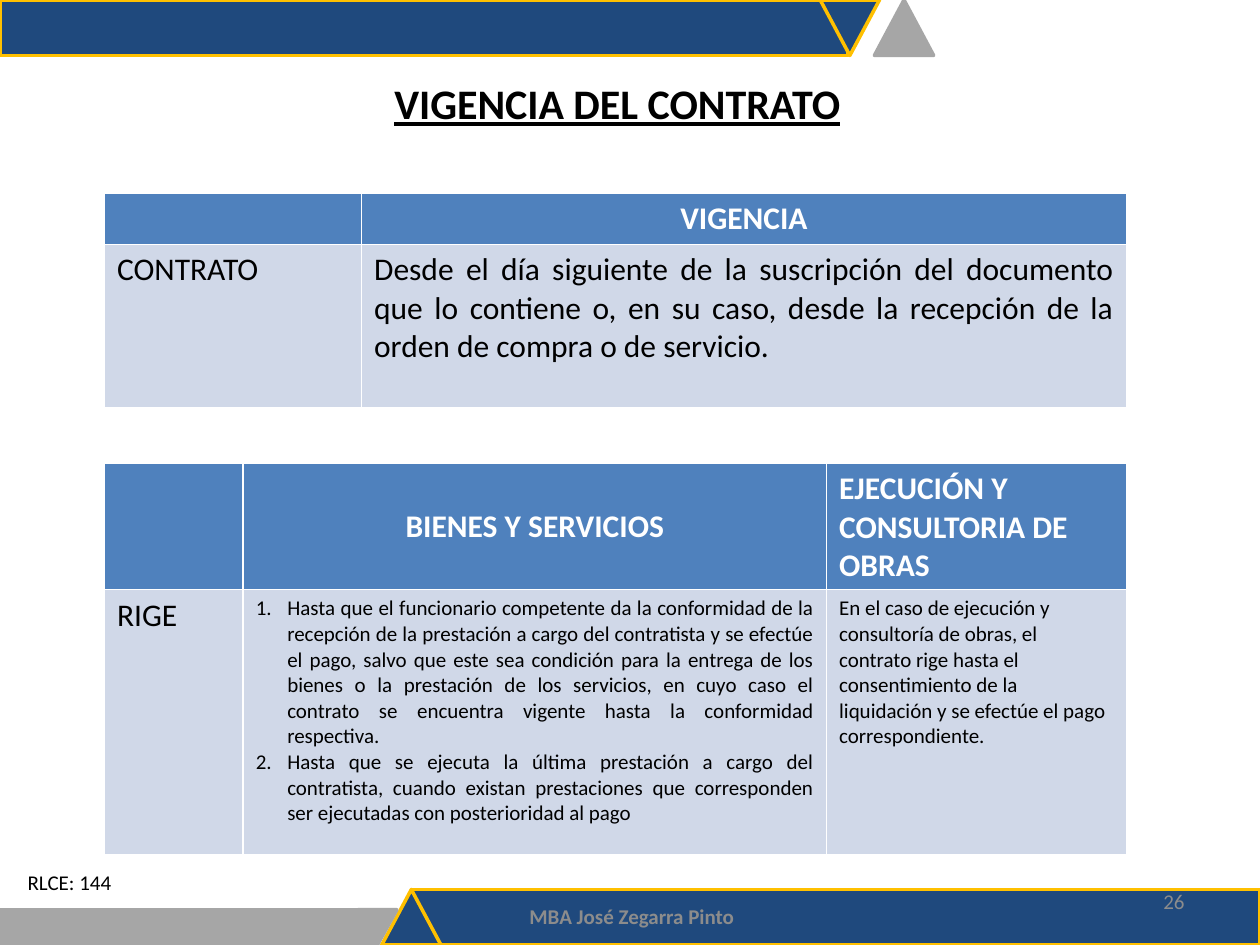
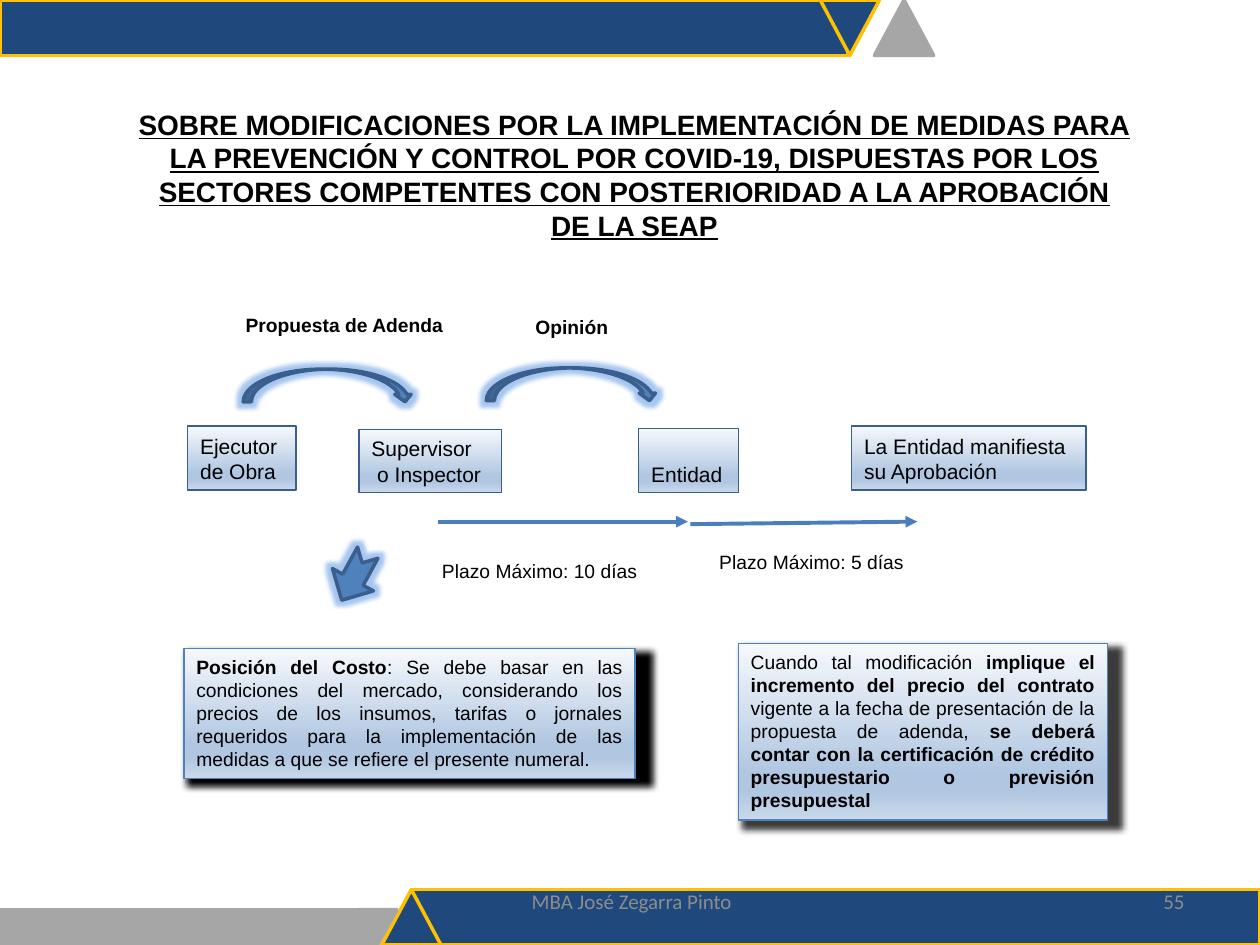
from dataclasses import dataclass, replace

from lxml.etree import SubElement
from pptx import Presentation
from pptx.dml.color import RGBColor
from pptx.enum.shapes import MSO_CONNECTOR, MSO_SHAPE
from pptx.enum.text import MSO_ANCHOR, PP_ALIGN
from pptx.oxml.ns import qn
from pptx.util import Inches, Pt

HEX = {
    "navy": "1F497D", "gold": "FFC000", "gray": "A6A6A6", "foot": "8C8C8C",
    "blue": "4F81BD", "edge": "3A5F8C", "arrow": "4B7EBC", "pale": "D0D8E8",
    "glow": "3B82E0", "black": "000000", "white": "FFFFFF",
}
FADE = [(0, "F6F9FC"), (74, "B0C6E1"), (83, "B0C6E1"), (100, "CAD9EB")]
LEFT, MID, RIGHT, FULL = PP_ALIGN.LEFT, PP_ALIGN.CENTER, PP_ALIGN.RIGHT, PP_ALIGN.JUSTIFY
RECT, PEAK = MSO_SHAPE.RECTANGLE, MSO_SHAPE.FLOWCHART_EXTRACT


@dataclass(frozen=True)
class Box:
    x: float
    y: float
    w: float
    h: float

    def lengths(self) -> list:
        return [Inches(v) for v in (self.x, self.y, self.w, self.h)]


@dataclass(frozen=True)
class Style:
    font: str = "Calibri"
    size: float = 12
    color: str = "black"
    bold: bool = False
    under: bool = False
    align: PP_ALIGN = LEFT


@dataclass(frozen=True)
class Run:
    text: str
    bold: bool = False


@dataclass(frozen=True)
class Band:
    kind: MSO_SHAPE
    box: Box
    fill: str
    line: str
    turn: float = 0


@dataclass(frozen=True)
class Cell:
    lines: tuple
    style: Style
    anchor: MSO_ANCHOR = MSO_ANCHOR.TOP
    listed: bool = False


@dataclass(frozen=True)
class Note:
    box: Box
    runs: tuple
    shade: int


BANDS = [
    Band(RECT, Box(0, 0, 6.73, 0.44), "navy", "gold"),
    Band(PEAK, Box(6.51, 0, 0.47, 0.44), "navy", "gold", 180),
    Band(PEAK, Box(6.94, 0, 0.47, 0.44), "gray", "gray"),
    Band(RECT, Box(3.27, 7.06, 6.73, 0.44), "navy", "gold"),
    Band(RECT, Box(0, 7.22, 2.99, 0.28), "gray", "gray"),
    Band(PEAK, Box(3.03, 7.06, 0.47, 0.44), "navy", "gold"),
    Band(PEAK, Box(2.84, 7.22, 0.31, 0.28), "gray", "gray", 180),
]

FOOT = Style(color="foot", align=MID)
HEAD = Style(size=18, color="white", bold=True)
BODY = Style(size=18)
SMALL = Style()
STEP = Style("Arial")
LABEL = Style("Arial", 11)


def rgb(name: str) -> RGBColor:
    return RGBColor.from_string(HEX[name])


def write(frame, lines, style: Style, wrap: bool = True, anchor=MSO_ANCHOR.TOP) -> None:
    """Fill a text frame; each line is a string or a tuple of runs."""
    frame.word_wrap = wrap
    frame.vertical_anchor = anchor
    for i, line in enumerate(lines):
        para = frame.paragraphs[0] if i == 0 else frame.add_paragraph()
        para.alignment = style.align
        for part in (Run(line, style.bold),) if isinstance(line, str) else line:
            run = para.add_run()
            run.text = part.text
            font = run.font
            font.name, font.size = style.font, Pt(style.size)
            font.bold, font.underline = part.bold, style.under
            font.color.rgb = rgb(style.color)


def add_text(slide, box: Box, lines, style: Style, wrap=False, anchor=MSO_ANCHOR.TOP) -> None:
    write(slide.shapes.add_textbox(*box.lengths()).text_frame, lines, style, wrap, anchor)


def add_shape(slide, kind, box: Box, fill: str, line: str, width: float = 2, turn: float = 0):
    shape = slide.shapes.add_shape(kind, *box.lengths())
    shape.shadow.inherit = False
    shape.rotation = turn
    shape.fill.solid()
    shape.fill.fore_color.rgb = rgb(fill)
    shape.line.color.rgb = rgb(line)
    shape.line.width = Pt(width)
    return shape


def add_effect(shape, kind: str, color: str, alpha: int, **attrs) -> None:
    effects = shape.element.spPr.find(qn("a:effectLst"))
    node = SubElement(effects, qn(kind), {k: str(v) for k, v in attrs.items()})
    tint = SubElement(node, qn("a:srgbClr"), val=HEX[color])
    SubElement(tint, qn("a:alpha"), val=str(alpha * 1000))


def add_panel(slide, box: Box, line: str):
    """Add a rectangle with the shared vertical fade."""
    shape = add_shape(slide, RECT, box, "blue", line, 0.75)
    shape.fill.gradient()
    shape.fill.gradient_angle = 270
    stops = shape.element.spPr.find(qn("a:gradFill")).find(qn("a:gsLst"))
    for stop in list(stops):
        stops.remove(stop)
    for place, color in FADE:
        stop = SubElement(stops, qn("a:gs"), pos=str(place * 1000))
        SubElement(stop, qn("a:srgbClr"), val=color)
    return shape


def add_glow(slide, kind, box: Box, turn: float = 0):
    shape = add_shape(slide, kind, box, "blue", "edge", 2, turn)
    add_effect(shape, "a:glow", "glow", 45, rad=Inches(0.07))
    return shape


def add_arrow(slide, start: tuple, end: tuple) -> None:
    points = [Inches(v) for v in start + end]
    line = slide.shapes.add_connector(MSO_CONNECTOR.STRAIGHT, *points)
    line.line.color.rgb = rgb("arrow")
    line.line.width = Pt(2.25)
    SubElement(line.line._get_or_add_ln(), qn("a:tailEnd"), type="triangle")
    SubElement(line.element.spPr, qn("a:effectLst"))


def add_grid(slide, box: Box, cols: list, rows: list, cells: list) -> None:
    table = slide.shapes.add_table(len(rows), len(cols), *box.lengths()).table
    table.horz_banding = False
    for col, width in zip(table.columns, cols):
        col.width = Inches(width)
    for r, height in enumerate(rows):
        table.rows[r].height = Inches(height)
        for c, item in enumerate(cells[r]):
            cell = table.cell(r, c)
            cell.fill.solid()
            cell.fill.fore_color.rgb = rgb("pale" if r else "blue")
            if item is None:
                continue
            write(cell.text_frame, item.lines, item.style)
            cell.vertical_anchor = item.anchor
            if item.listed:
                for para in cell.text_frame.paragraphs:
                    props = para._p.get_or_add_pPr()
                    props.set("marL", str(Inches(0.25)))
                    props.set("indent", str(-Inches(0.25)))
                    SubElement(props, qn("a:buAutoNum"), type="arabicPeriod")


def add_page(deck, title: str, box: Box, style: Style, number: str, foot_y: float, foot: Style):
    """Add a slide with its title, bands, footer and number."""
    slide = deck.slides.add_slide(deck.slide_layouts[5])
    head = slide.shapes.title
    head.left, head.top, head.width, head.height = box.lengths()
    write(head.text_frame, [title], style, anchor=MSO_ANCHOR.MIDDLE)
    for band in BANDS:
        add_shape(slide, band.kind, band.box, band.fill, band.line, turn=band.turn)
    marks = [
        (Box(3.43, foot_y, 3.17, 0.4), "MBA José Zegarra Pinto", foot),
        (Box(7.17, 6.95, 2.33, 0.4), number, replace(FOOT, align=RIGHT)),
    ]
    for place, text, look in marks:
        add_text(slide, place, [text], look, True, MSO_ANCHOR.MIDDLE)
    return slide


def build_terms(deck) -> None:
    slide = add_page(deck, "VIGENCIA DEL CONTRATO", Box(2.9, 0.56, 4, 0.51),
                     Style(size=24, bold=True, under=True, align=MID),
                     "26", 7.07, replace(FOOT, bold=True))
    center = replace(HEAD, align=MID)
    add_grid(slide, Box(0.83, 1.53, 8.11, 1.71), [2.04, 6.07], [0.41, 1.3], [
        [None, Cell(("VIGENCIA",), center)],
        [Cell(("CONTRATO",), BODY),
         Cell(("Desde el día siguiente de la suscripción del documento que lo contiene o, "
               "en su caso, desde la recepción de la orden de compra o de servicio.",),
              replace(BODY, align=FULL))],
    ])
    goods = (
        "Hasta que el funcionario competente da la conformidad de la recepción de la "
        "prestación a cargo del contratista y se efectúe el pago, salvo que este sea "
        "condición para la entrega de los bienes o la prestación de los servicios, en cuyo "
        "caso el contrato se encuentra vigente hasta la conformidad respectiva.",
        "Hasta que se ejecuta la última prestación a cargo del contratista, cuando existan "
        "prestaciones que corresponden ser ejecutadas con posterioridad al pago",
    )
    works = ("En el caso de ejecución y consultoría de obras, el contrato rige hasta el "
             "consentimiento de la liquidación y se efectúe el pago correspondiente.")
    add_grid(slide, Box(0.83, 3.68, 8.11, 3.1), [1.1, 4.63, 2.38], [1, 2.1], [
        [None, Cell(("BIENES Y SERVICIOS",), center, MSO_ANCHOR.MIDDLE),
         Cell(("EJECUCIÓN Y CONSULTORIA DE OBRAS",), HEAD)],
        [Cell(("RIGE",), BODY), Cell(goods, replace(SMALL, align=FULL), listed=True),
         Cell((works,), SMALL)],
    ])
    add_text(slide, Box(0.12, 6.85, 0.88, 0.3), ["RLCE: 144"], SMALL)


def build_flow(deck) -> None:
    slide = add_page(
        deck,
        "SOBRE MODIFICACIONES POR LA IMPLEMENTACIÓN DE MEDIDAS PARA LA PREVENCIÓN Y CONTROL "
        "POR COVID-19, DISPUESTAS POR LOS SECTORES COMPETENTES CON POSTERIORIDAD A LA "
        "APROBACIÓN DE LA SEAP",
        Box(0.98, 1, 8.11, 0.77), Style("Arial", 16, bold=True, under=True, align=MID),
        "55", 6.95, FOOT)

    for start, end in [((3.48, 4.14), (5.46, 4.14)), ((5.48, 4.16), (7.28, 4.14))]:
        add_arrow(slide, start, end)

    steps = [
        (Box(1.49, 3.38, 0.86, 0.51), ["Ejecutor", "de Obra"]),
        (Box(2.85, 3.41, 1.13, 0.5), ["Supervisor", " o Inspector"]),
        (Box(5.07, 3.4, 0.79, 0.51), ["Entidad"]),
        (Box(6.76, 3.38, 1.86, 0.51), ["La Entidad manifiesta", "su Aprobación"]),
    ]
    for box, lines in steps:
        panel = add_panel(slide, box, "edge")
        write(panel.text_frame, lines, STEP, False, MSO_ANCHOR.BOTTOM)

    notes = [
        Note(Box(1.46, 5.15, 3.58, 1.03), (
            Run("Posición del Costo", True),
            Run(": Se debe basar en las condiciones del mercado, considerando los precios de "
                "los insumos, tarifas o jornales requeridos para la implementación de las "
                "medidas a que se refiere el presente numeral.")), 100),
        Note(Box(5.86, 5.11, 2.93, 1.4), (
            Run("Cuando tal modificación "),
            Run("implique el incremento del precio del contrato ", True),
            Run("vigente a la fecha de presentación de la propuesta de adenda, "),
            Run("se deberá contar con la certificación de crédito presupuestario o "
                "previsión presupuestal", True)), 76),
    ]
    for note in notes:
        panel = add_panel(slide, note.box, "blue")
        add_effect(panel, "a:outerShdw", "black", note.shade, blurRad=Pt(4), dist=Pt(3),
                   dir=2700000, sx=103000, sy=103000, algn="tl")
        write(panel.text_frame, [note.runs], replace(LABEL, align=FULL))

    for box in (Box(1.93, 2.93, 1.35, 0.26), Box(3.86, 2.92, 1.36, 0.26)):
        curve = add_glow(slide, MSO_SHAPE.CURVED_DOWN_ARROW, box)
        for i, value in enumerate((0.25, 0.5, 0.23)):
            curve.adjustments[i] = value
    add_glow(slide, MSO_SHAPE.NOTCHED_RIGHT_ARROW, Box(2.6, 4.39, 0.43, 0.37), 118.7)

    strong = replace(LABEL, bold=True)
    labels = [
        (Box(1.85, 2.44, 1.78, 0.29), "Propuesta de Adenda", strong),
        (Box(4.15, 2.45, 0.78, 0.29), "Opinión", strong),
        (Box(3.41, 4.39, 1.8, 0.28), "Plazo Máximo: 10 días", LABEL),
        (Box(5.61, 4.32, 1.72, 0.29), "Plazo Máximo: 5 días", LABEL),
    ]
    for box, text, style in labels:
        add_text(slide, box, [text], style)


def main() -> None:
    deck = Presentation()
    deck.slide_width, deck.slide_height = Inches(10), Inches(7.5)
    build_terms(deck)
    build_flow(deck)
    deck.save("out.pptx")


if __name__ == "__main__":
    main()
